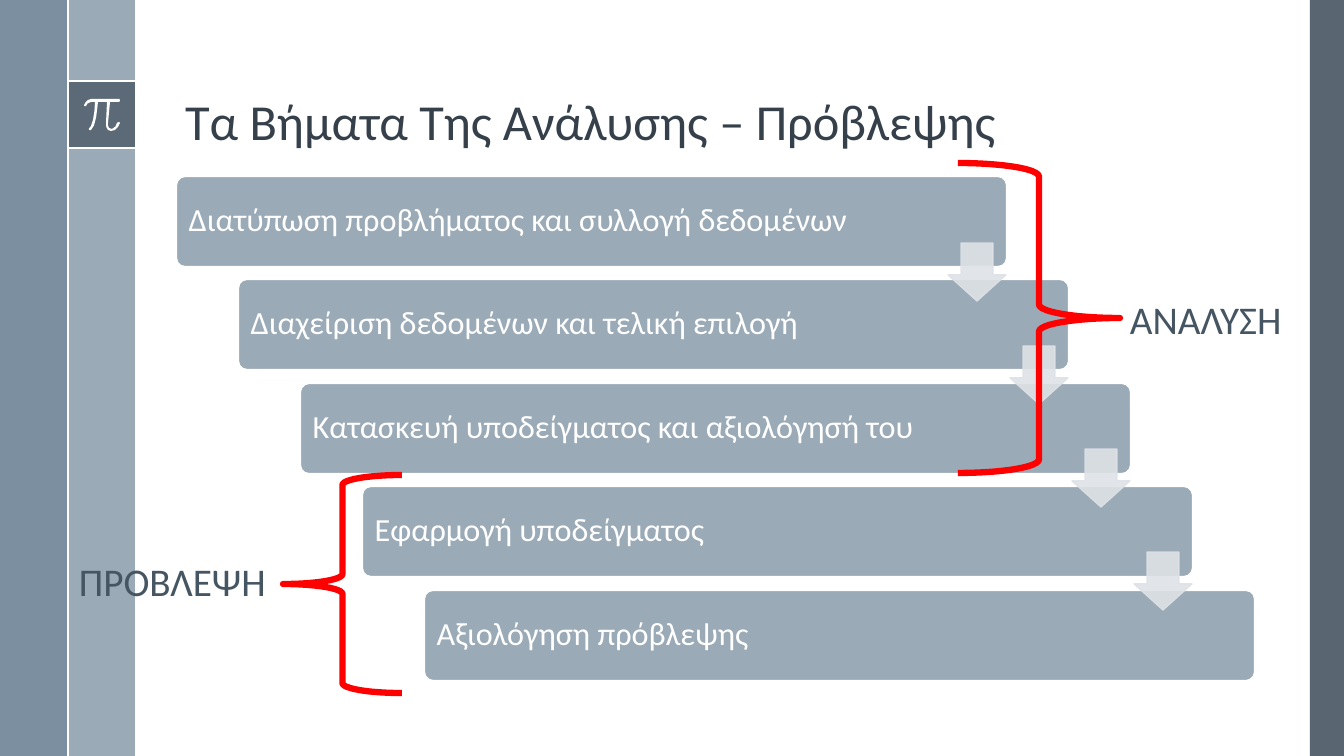
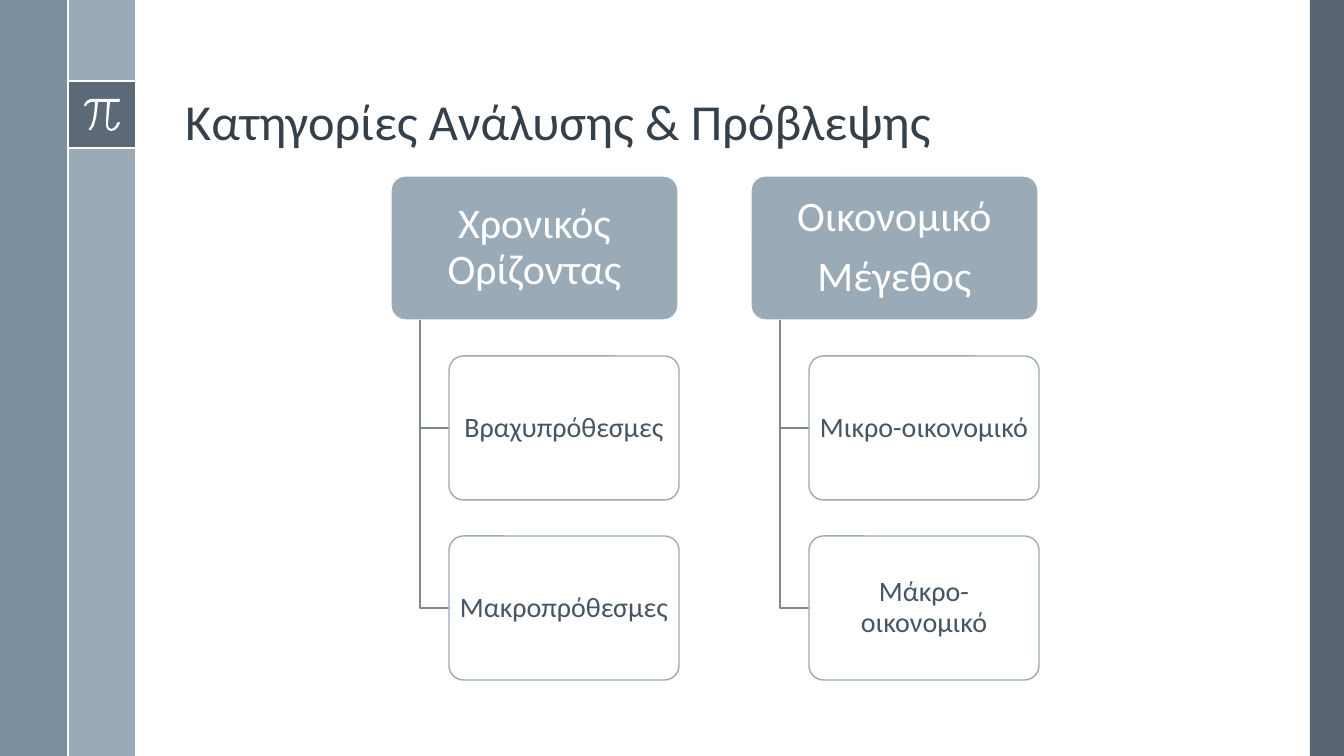
"""Build two slides on the steps and categories of analysis and forecasting."""
import lxml.etree
import pptx
import pptx.dml.color
import pptx.enum.shapes
import pptx.enum.text
import pptx.oxml.ns
import pptx.util

PX = 9071
RGB = pptx.dml.color.RGBColor.from_string
Pt = pptx.util.Pt
qn = pptx.oxml.ns.qn
SHAPE = pptx.enum.shapes.MSO_SHAPE
ALIGN = pptx.enum.text.PP_ALIGN
MIDDLE = pptx.enum.text.MSO_ANCHOR.MIDDLE

THEME = {
    "font": "Calibri",
    "white": ("FFFFFF", 100), "glass": ("FFFFFF", 90),
    "steel": ("9BAAB7", 100), "arrow": ("DEE2E6", 90),
    "left": ("6A8093", 88), "right": ("475562", 90), "badge": ("475562", 75),
    "elbow": ("7C8893", 100), "brace": ("FF0000", 100),
    "title": {"size": 36, "color": "35404A"},
    "step": {"size": 23, "color": "FFFFFF"},
    "label": {"size": 28, "color": "465562"},
    "head": {"size": 30, "color": "FFFFFF"},
    "child": {"size": 20, "color": "465562"},
}


def paint(sp, fill=None, line=None, width=1):
    """Set fill, line and opacity, and drop the shadow."""
    sp.shadow.inherit = False
    sp.line.width = Pt(width)
    for fmt, key in ((sp.fill, fill), (sp.line.fill, line)):
        if key is None:
            fmt.background()
            continue
        color, opacity = THEME[key]
        fmt.solid()
        fmt.fore_color.rgb = RGB(color)
        if opacity < 100:
            clr = list(sp.element.spPr.iter(qn("a:srgbClr")))[-1]
            lxml.etree.SubElement(clr, qn("a:alpha")).set("val", str(opacity * 1000))
    return sp


def write(sp, text, role, align=ALIGN.LEFT, spacing=0.9, **frame):
    """Fill a text frame, one paragraph per line of text."""
    tf = sp.text_frame
    tf.text = text
    for name, value in {"word_wrap": True, **frame}.items():
        setattr(tf, name, value)
    style = THEME[role]
    for i, p in enumerate(tf.paragraphs):
        values = {"alignment": align, "line_spacing": spacing,
                  "space_before": Pt(10 if i else 0)}
        for name, value in values.items():
            setattr(p, name, value)
        for r in p.runs:
            r.font.name = THEME["font"]
            r.font.size = Pt(style["size"])
            r.font.color.rgb = RGB(style["color"])


prs = pptx.Presentation()
prs.slide_width, prs.slide_height = 1344 * PX, 756 * PX
layout = prs.slide_layouts[5]
title, *others = layout.placeholders
for ph in others:
    layout.shapes.element.remove(ph.element)
for name, value in {"left": 175, "top": 19, "width": 1079, "height": 137}.items():
    setattr(title, name, value * PX)
title.text_frame.vertical_anchor = pptx.enum.text.MSO_ANCHOR.BOTTOM

slides = []
for text in ("Τα Βήματα Της Ανάλυσης – Πρόβλεψης", "Κατηγορίες Ανάλυσης & Πρόβλεψης"):
    slide = prs.slides.add_slide(layout)
    write(slide.shapes.title, text, "title")
    slides.append(slide)
steps, categories = (slide.shapes for slide in slides)

frame = []
bands = [
    ("right", 1310, 0, 34, 756),
    ("steel", 68, 0, 67, 756),
    ("left", 0, 0, 68, 756),
    ("badge", 68, 81, 67, 67),
]
for fill, *box in bands:
    frame.append(paint(steps.add_shape(SHAPE.RECTANGLE, *[v * PX for v in box]), fill))

for rule in ((68, 81, 135, 81), (68, 148, 135, 148), (68, 0, 68, 756)):
    c = steps.add_connector(pptx.enum.shapes.MSO_CONNECTOR.STRAIGHT, *[v * PX for v in rule])
    c.line.color.rgb = RGB(THEME["white"][0])
    c.line.width = Pt(1.5)
    lxml.etree.SubElement(c.element.spPr, qn("a:effectLst"))
    frame.append(c)

pi_outline = [
    (70, 0), (40, 10), (15, 35), (0, 62), (5, 72), (15, 73), (22, 68), (35, 45),
    (70, 30), (110, 30), (104, 120), (90, 210), (70, 270), (50, 295), (50, 308),
    (60, 313), (70, 310), (100, 265), (122, 180), (140, 30), (230, 30), (220, 240),
    (223, 280), (240, 310), (270, 320), (310, 310), (340, 280), (360, 240),
    (350, 230), (330, 238), (315, 275), (280, 300), (250, 290), (240, 265),
    (240, 240), (260, 30), (350, 30), (360, 20), (355, 0),
]
pen = steps.build_freeform(355, 0, scale=PX / 10)
pen.add_line_segments(pi_outline, close=True)
frame.append(paint(pen.convert_to_shape(84 * PX, 99 * PX), "white"))
for sp in frame:
    layout.shapes.element.append(sp.element)

step_texts = [
    "Διατύπωση προβλήματος και συλλογή δεδομένων",
    "Διαχείριση δεδομένων και τελική επιλογή",
    "Κατασκευή υποδείγματος και αξιολόγησή του",
    "Εφαρμογή υποδείγματος",
    "Αξιολόγηση πρόβλεψης",
]
for i, text in enumerate(step_texts):
    box = (176 + 62 * i, 176 + 207 * i // 2, 831, 91)
    sp = steps.add_shape(SHAPE.ROUNDED_RECTANGLE, *[v * PX for v in box])
    sp.adjustments[0] = 0.1
    paint(sp, "steel", "white", 1.5)
    write(sp, text, "step", vertical_anchor=MIDDLE, margin_left=10 * PX)
for i in range(len(step_texts) - 1):
    box = (948 + 62 * i, 243 + 103 * i, 58, 58)
    sp = steps.add_shape(SHAPE.DOWN_ARROW, *[v * PX for v in box])
    sp.adjustments[0], sp.adjustments[1] = 0.55, 0.45
    paint(sp, "arrow", "arrow")

groups = [
    (SHAPE.RIGHT_BRACE, (958, 163, 162, 310), "ΑΝΑΛΥΣΗ", (1120, 290, 186, 57)),
    (SHAPE.LEFT_BRACE, (283, 475, 119, 218), "ΠΡΟΒΛΕΨΗ", (69, 552, 215, 57)),
]
for kind, brace, text, label in groups:
    paint(steps.add_shape(kind, *[v * PX for v in brace]), line="brace", width=4.5)
    write(steps.add_textbox(*[v * PX for v in label]), text, "label", spacing=1.0)

trees = [
    ("Χρονικός Ορίζοντας", "Βραχυπρόθεσμες", "Μακροπρόθεσμες"),
    ("Οικονομικό\nΜέγεθος", "Μικρο-οικονομικό", "Μάκρο-οικονομικό"),
]
HEIGHT, PITCH, INDENT = 144, 180, 29
for col, texts in enumerate(trees):
    left = 391 + 360 * col
    for row, text in enumerate(texts):
        top = 176 + PITCH * row
        if row:
            pen = categories.build_freeform(left + INDENT, 176 + HEIGHT, scale=PX)
            middle = top + HEIGHT // 2
            pen.add_line_segments(
                [(left + INDENT, middle), (left + 2 * INDENT, middle)], close=False)
            paint(pen.convert_to_shape(), line="elbow")
            role, fill, line, margin, box = (
                "child", "glass", "steel", 4, (left + 2 * INDENT, top, 230, HEIGHT))
        else:
            role, fill, line, margin, box = (
                "head", "steel", "white", 7, (left, top, 287, HEIGHT))
        sp = categories.add_shape(SHAPE.ROUNDED_RECTANGLE, *[v * PX for v in box])
        sp.adjustments[0] = 0.1
        paint(sp, fill, line)
        write(sp, text, role, ALIGN.CENTER, vertical_anchor=MIDDLE,
              margin_left=margin * PX, margin_right=margin * PX)

prs.save("out.pptx")
